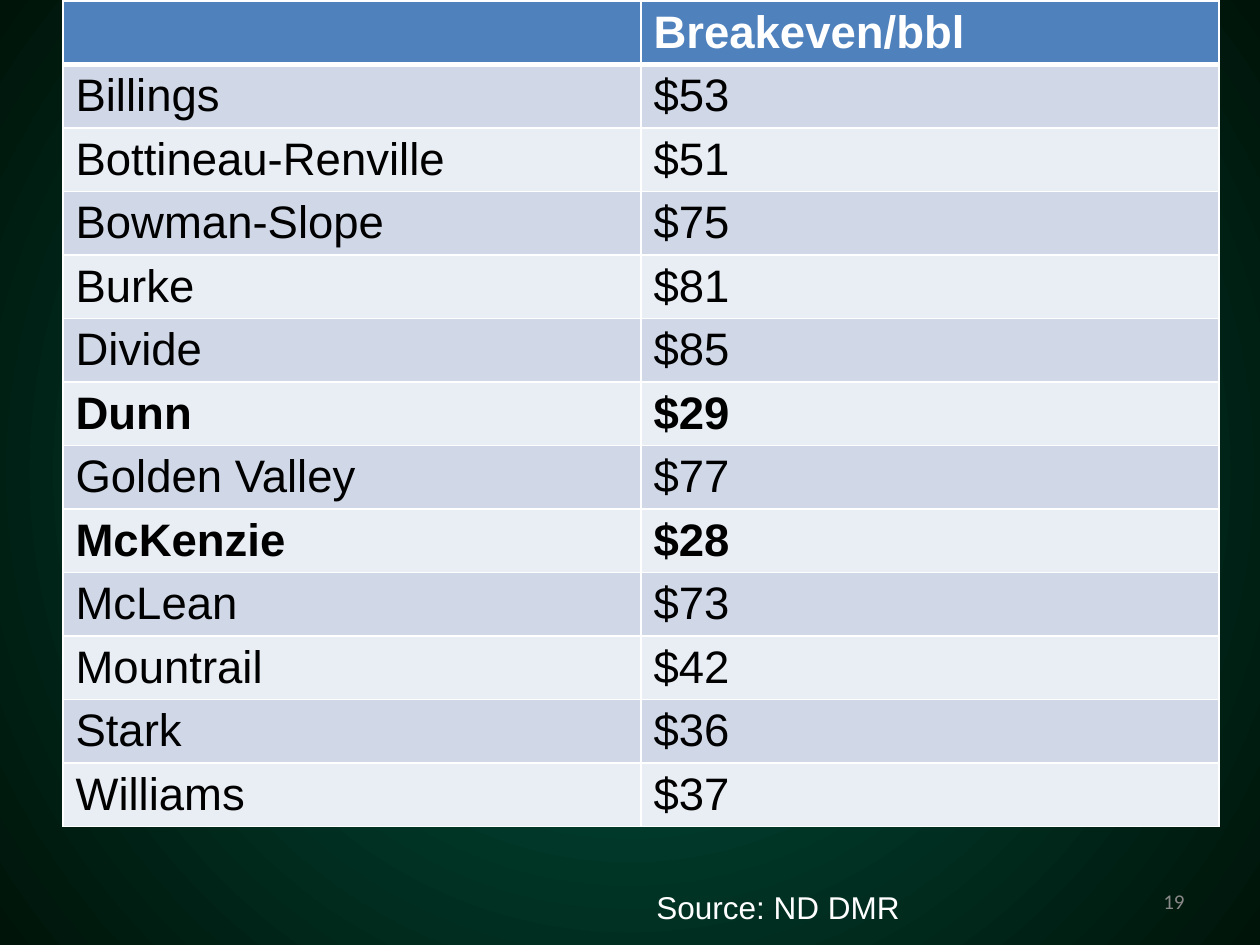
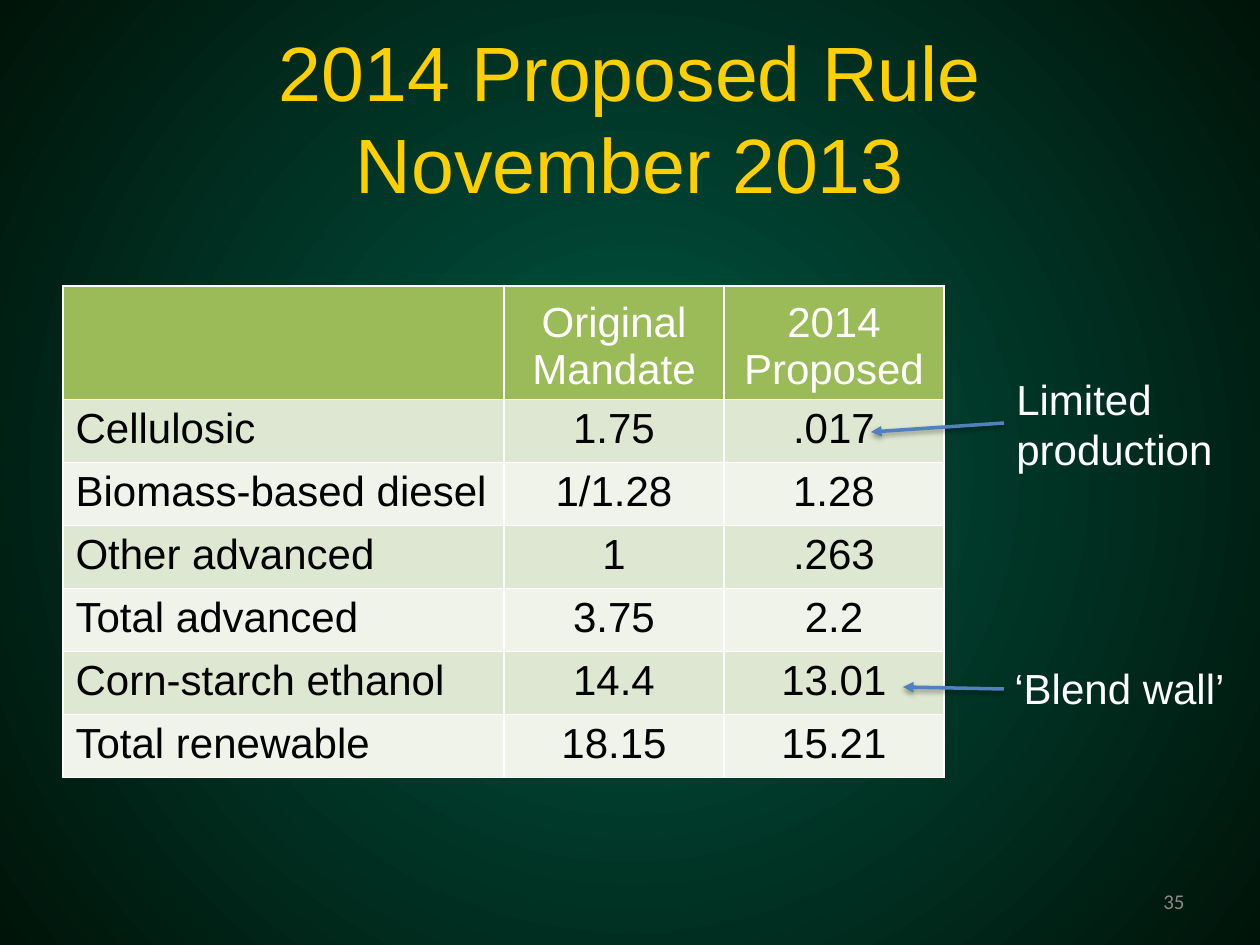
from pptx import Presentation
from pptx.dml.color import RGBColor
from pptx.enum.shapes import MSO_CONNECTOR
from pptx.enum.text import MSO_ANCHOR, PP_ALIGN
from pptx.oxml import parse_xml
from pptx.oxml.ns import nsdecls, qn
from pptx.util import Emu, Pt

LEFT, CENTER, RIGHT = PP_ALIGN.LEFT, PP_ALIGN.CENTER, PP_ALIGN.RIGHT
TOP, MIDDLE, BOTTOM = MSO_ANCHOR.TOP, MSO_ANCHOR.MIDDLE, MSO_ANCHOR.BOTTOM
STRAIGHT = MSO_CONNECTOR.STRAIGHT

PX_PER_INCH = 126
WHITE, BLACK, GRAY, GOLD, BLUE = "FFFFFF", "000000", "898989", "FFCF01", "4F81BD"
BACKGROUND = [(0.02, "005643"), (1, "001409")]
BLUE_BANDS = (BLUE, "D0D8E8", "E9EDF4")
GREEN_BANDS = ("9BBB59", "DEE7D1", "EFF3EA")

BREAKEVENS = [
    ("", "Breakeven/bbl"),
    ("Billings", "$53"),
    ("Bottineau-Renville", "$51"),
    ("Bowman-Slope", "$75"),
    ("Burke", "$81"),
    ("Divide", "$85"),
    ("Dunn", "$29"),
    ("Golden Valley", "$77"),
    ("McKenzie", "$28"),
    ("McLean", "$73"),
    ("Mountrail", "$42"),
    ("Stark", "$36"),
    ("Williams", "$37"),
]
MANDATES = [
    ("", "Original Mandate", "2014 Proposed"),
    ("Cellulosic", "1.75", ".017"),
    ("Biomass-based diesel", "1/1.28", "1.28"),
    ("Other advanced", "1", ".263"),
    ("Total advanced", "3.75", "2.2"),
    ("Corn-starch ethanol", "14.4", "13.01"),
    ("Total renewable", "18.15", "15.21"),
]


def px(n):
    return Emu(round(n * 914400 / PX_PER_INCH))


def rgb(color):
    return RGBColor.from_string(color)


def set_font(p, size, color, name="Arial", bold=False):
    p.font.name = name
    p.font.size = Pt(size)
    p.font.bold = bold
    p.font.color.rgb = rgb(color)


def set_background(master):
    fill = master.background.fill
    fill.gradient()
    for stop, (position, color) in zip(fill.gradient_stops, BACKGROUND):
        stop.position = position
        stop.color.rgb = rgb(color)
    lin = master.element.cSld.find(".//" + qn("a:lin"))
    lin.getparent().replace(lin, parse_xml(
        f'<a:path {nsdecls("a")} path="circle">'
        '<a:fillToRect l="50000" t="50000" r="50000" b="50000"/></a:path>'))


def add_text(slide, text, box, size, color=WHITE, name="Arial", align=LEFT, anchor=TOP):
    tf = slide.shapes.add_textbox(*map(px, box)).text_frame
    tf.word_wrap = True
    tf.vertical_anchor = anchor
    p = tf.paragraphs[0]
    p.text = text
    p.alignment = align
    set_font(p, size, color, name)


def add_slide_number(slide, number):
    add_text(slide, str(number), (903, 876, 294, 50), 12, GRAY, "Calibri", RIGHT, MIDDLE)


def set_title(slide, text):
    sp = slide.shapes.title
    sp.left, sp.top, sp.width, sp.height = map(px, (63, 38, 1134, 158))
    tf = sp.text_frame
    tf.text = text
    tf.vertical_anchor = MIDDLE
    p = tf.paragraphs[0]
    p.alignment = CENTER
    set_font(p, 44, GOLD)


def set_borders(cell, top, bottom):
    widths = {"L": 1, "R": 1, "T": top, "B": bottom}
    tcPr = cell._tc.get_or_add_tcPr()
    for i, (side, width) in enumerate(widths.items()):
        tcPr.insert(i, parse_xml(
            f'<a:ln{side} {nsdecls("a")} w="{Pt(width)}"><a:solidFill>'
            f'<a:srgbClr val="{WHITE}"/></a:solidFill></a:ln{side}>'))


def add_table(slide, rows, left, top, col_widths, row_heights, bands, size,
              bold_rows=(), value_align=LEFT, header_anchor=TOP, header_rule=1):
    frame = slide.shapes.add_table(len(rows), len(col_widths), px(left), px(top),
                                   px(sum(col_widths)), px(sum(row_heights)))
    table = frame.table
    for column, width in zip(table.columns, col_widths):
        column.width = px(width)
    for i, (values, height) in enumerate(zip(rows, row_heights)):
        table.rows[i].height = px(height)
        header = i == 0
        for j, value in enumerate(values):
            cell = table.cell(i, j)
            cell.fill.solid()
            cell.fill.fore_color.rgb = rgb(bands[0 if header else 2 - i % 2])
            set_borders(cell, header_rule if i == 1 else 1, header_rule if header else 1)
            cell.vertical_anchor = header_anchor if header else TOP
            p = cell.text_frame.paragraphs[0]
            p.text = value
            p.alignment = value_align if j else LEFT
            set_font(p, size, WHITE if header else BLACK, bold=i in bold_rows)


def add_arrow(slide, start, end):
    line = slide.shapes.add_connector(STRAIGHT, *map(px, start + end))
    line.line.color.rgb = rgb(BLUE)
    line.line.width = Pt(2)
    line.line._get_or_add_ln().append(
        parse_xml(f'<a:tailEnd {nsdecls("a")} type="triangle"/>'))
    line._element.spPr.append(parse_xml(
        f'<a:effectLst {nsdecls("a")}><a:outerShdw blurRad="{Pt(3.1)}" dist="{Pt(1.6)}" '
        f'dir="5400000" rotWithShape="0"><a:srgbClr val="{BLACK}"><a:alpha val="38000"/>'
        '</a:srgbClr></a:outerShdw></a:effectLst>'))


def add_breakeven_slide(prs):
    slide = prs.slides.add_slide(prs.slide_layouts[6])
    add_table(slide, BREAKEVENS, 63, 1, [578, 578], [63] * len(BREAKEVENS), BLUE_BANDS, 26,
              bold_rows=(0, 6, 8), header_rule=3)
    add_slide_number(slide, 19)
    add_text(slide, "Source: ND DMR", (644, 882, 407, 50), 18)


def add_rule_slide(prs):
    slide = prs.slides.add_slide(prs.slide_layouts[5])
    set_title(slide, "2014 Proposed Rule\vNovember 2013")
    add_slide_number(slide, 35)
    add_table(slide, MANDATES, 63, 286, [441, 220, 220], [106] + [59] * 6, GREEN_BANDS, 24,
              value_align=CENTER, header_anchor=BOTTOM)
    add_arrow(slide, (1004, 423), (871, 432))
    add_arrow(slide, (1004, 689), (903, 687))
    add_text(slide, "Limited production", (1004, 367, 228, 115), 24)
    add_text(slide, "‘Blend wall’", (1002, 656, 258, 63), 24)


def main():
    prs = Presentation()
    prs.slide_width, prs.slide_height = px(1260), px(945)
    set_background(prs.slide_master)
    add_breakeven_slide(prs)
    add_rule_slide(prs)
    prs.save("out.pptx")


if __name__ == "__main__":
    main()
